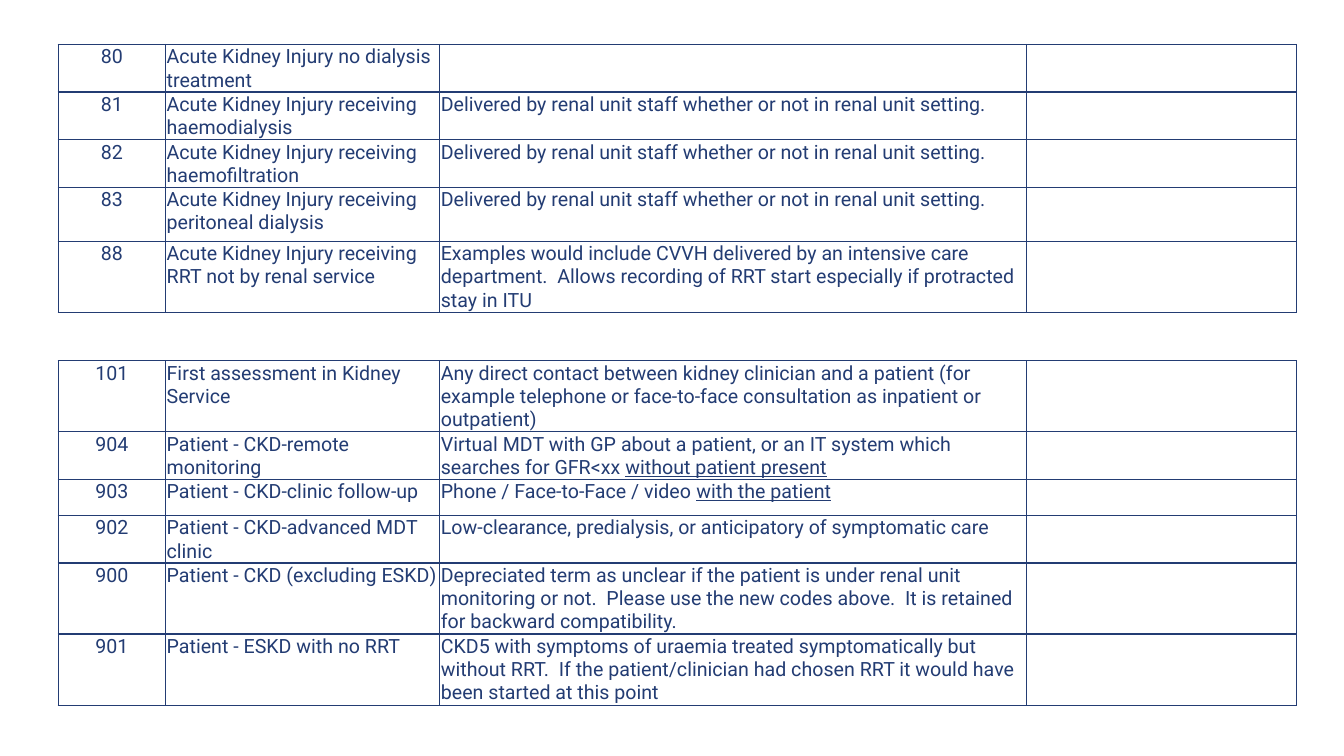
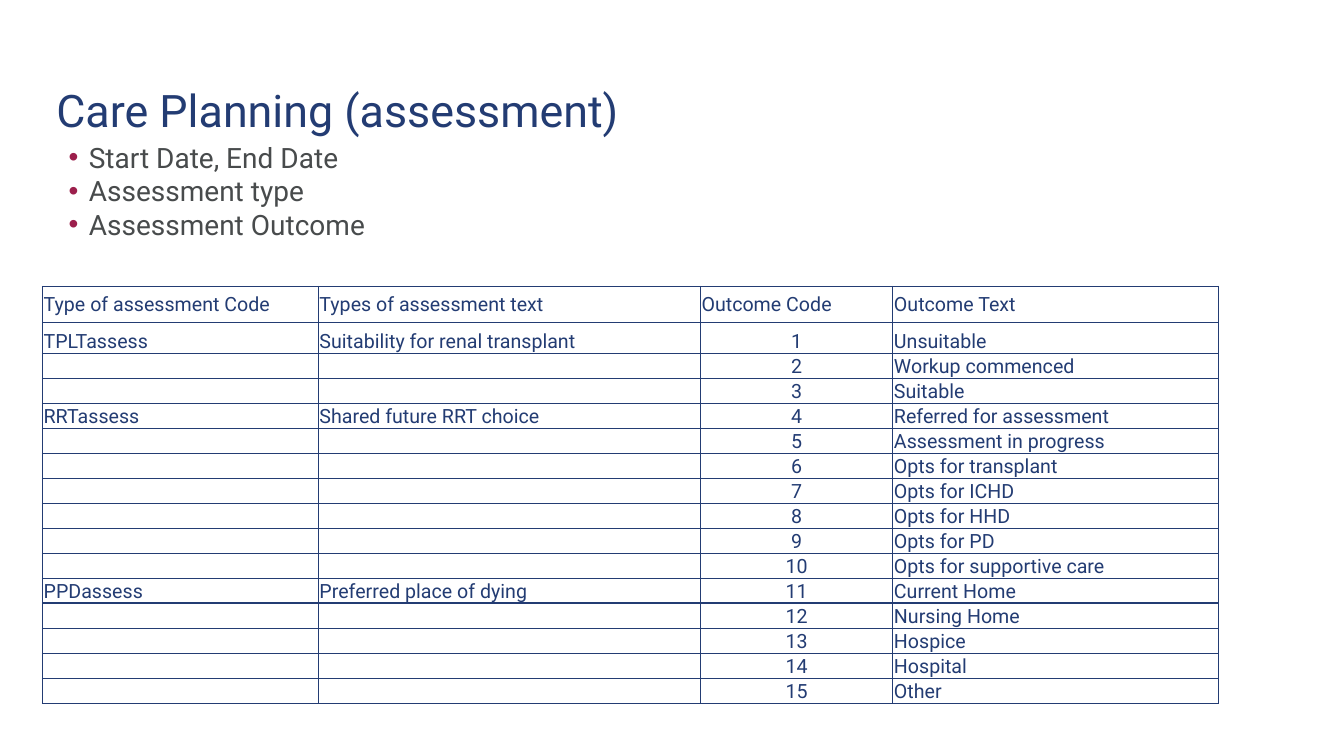
from dataclasses import dataclass
from typing import NamedTuple

from lxml.etree import SubElement
from pptx import Presentation
from pptx.dml.color import RGBColor
from pptx.enum.text import MSO_ANCHOR, MSO_AUTO_SIZE, PP_ALIGN
from pptx.oxml import parse_xml
from pptx.oxml.ns import nsdecls, qn
from pptx.util import Cm, Pt

# Shared style
FONT = "Roboto"
NAVY = "233C73"
GREY = "484B4C"
CRIMSON = "9C1F4C"
TABLE_SIZE = 14
CELL_MARGIN = Cm(0.03)


class Run(NamedTuple):
    text: str
    underline: bool = False


class Box(NamedTuple):
    left: float
    top: float
    width: float
    height: float


@dataclass(frozen=True)
class Grid:
    left: float
    top: float
    columns: list[float]
    heights: list[float]
    rows: list[list]
    centred_column: int
    anchor: MSO_ANCHOR = MSO_ANCHOR.TOP
    has_header: bool = False


def colour(value: str) -> RGBColor:
    return RGBColor.from_string(value)


def add_run(paragraph, content: Run, size: float, text_colour: str) -> None:
    run = paragraph.add_run()
    run.text = content.text
    run.font.name = FONT
    run.font.size = Pt(size)
    run.font.color.rgb = colour(text_colour)
    if content.underline:
        run.font.underline = True


# Tables
def set_borders(cell) -> None:
    properties = cell._tc.get_or_add_tcPr()
    for index, side in enumerate(("lnL", "lnR", "lnT", "lnB")):
        properties.insert(index, parse_xml(
            f'<a:{side} {nsdecls("a")} w="12700"><a:solidFill>'
            f'<a:srgbClr val="{NAVY}"/></a:solidFill></a:{side}>'))


def fill_cell(cell, content: str | tuple[Run, ...], anchor: MSO_ANCHOR,
              alignment: PP_ALIGN) -> None:
    cell.fill.background()
    cell.margin_left = cell.margin_right = cell.margin_top = CELL_MARGIN
    cell.margin_bottom = 0
    cell.vertical_anchor = anchor
    set_borders(cell)
    paragraph = cell.text_frame.paragraphs[0]
    paragraph.alignment = alignment
    runs = (Run(content),) if isinstance(content, str) else content
    for run in runs:
        if run.text:
            add_run(paragraph, run, TABLE_SIZE, NAVY)
    # Empty cells keep the table's text size, so rows stay low
    SubElement(paragraph._p, qn("a:endParaRPr"), sz=str(TABLE_SIZE * 100))


def add_grid(slide, grid: Grid) -> None:
    table = slide.shapes.add_table(
        len(grid.rows), len(grid.columns), Cm(grid.left), Cm(grid.top),
        Cm(sum(grid.columns)), Cm(sum(grid.heights))).table
    table.first_row = table.horz_banding = False
    for column, width in zip(table.columns, grid.columns):
        column.width = Cm(width)
    for row, height in zip(table.rows, grid.heights):
        row.height = Cm(height)
    for row_index, contents in enumerate(grid.rows):
        is_header = grid.has_header and row_index == 0
        anchor = MSO_ANCHOR.MIDDLE if is_header else grid.anchor
        for column_index, content in enumerate(contents):
            centred = column_index == grid.centred_column and not is_header
            fill_cell(table.cell(row_index, column_index), content, anchor,
                      PP_ALIGN.CENTER if centred else PP_ALIGN.LEFT)


# Title and list placeholders
def place(shape, box: Box, anchor: MSO_ANCHOR):
    shape.left, shape.top, shape.width, shape.height = map(Cm, box)
    frame = shape.text_frame
    frame.margin_left = frame.margin_right = 0
    frame.margin_top = frame.margin_bottom = 0
    frame.word_wrap = True
    frame.auto_size = MSO_AUTO_SIZE.NONE
    frame.vertical_anchor = anchor
    return frame


def set_title(slide, text: str) -> None:
    frame = place(slide.shapes.title, Box(1.42, 1.02, 26.49, 3.5), MSO_ANCHOR.MIDDLE)
    paragraph = frame.paragraphs[0]
    paragraph.alignment = PP_ALIGN.LEFT
    add_run(paragraph, Run(text), 32, NAVY)


def set_bullets(slide, items: list[str]) -> None:
    frame = place(slide.placeholders[1], Box(1.73, 3.53, 30.48, 5), MSO_ANCHOR.TOP)
    for index, item in enumerate(items):
        paragraph = frame.paragraphs[0] if index == 0 else frame.add_paragraph()
        paragraph.space_before = Pt(0)
        properties = paragraph._p.get_or_add_pPr()
        properties.set("marL", str(Cm(0.51)))
        properties.set("indent", str(-Cm(0.51)))
        bullet_colour = SubElement(properties, qn("a:buClr"))
        SubElement(bullet_colour, qn("a:srgbClr"), val=CRIMSON)
        SubElement(properties, qn("a:buChar"), char="•")
        add_run(paragraph, Run(item), 20, GREY)


# Content: kidney care codes
CODE_COLUMNS = [2.7, 6.91, 14.78, 6.81]
ONE_LINE, TWO_LINES, THREE_LINES = 0.91, 1.19, 1.79
BY_RENAL_STAFF = "Delivered by renal unit staff whether or not in renal unit setting."

ACUTE_ROWS = [
    ["80", "Acute Kidney Injury no dialysis treatment", "", ""],
    ["81", "Acute Kidney Injury receiving haemodialysis", BY_RENAL_STAFF, ""],
    ["82", "Acute Kidney Injury receiving haemofiltration", BY_RENAL_STAFF, ""],
    ["83", "Acute Kidney Injury receiving peritoneal dialysis", BY_RENAL_STAFF, ""],
    ["88", "Acute Kidney Injury receiving RRT not by renal service",
     "Examples would include CVVH delivered by an intensive care department.  "
     "Allows recording of RRT start especially if protracted stay in ITU", ""],
]

CHRONIC_ROWS = [
    ["101", "First assessment in Kidney Service",
     "Any direct contact between kidney clinician and a patient (for example "
     "telephone or face-to-face consultation as inpatient or outpatient)", ""],
    ["904", "Patient - CKD-remote monitoring",
     (Run("Virtual MDT with GP about a patient, or an IT system which "
          "searches for GFR<xx "), Run("without patient present", True)), ""],
    ["903", "Patient - CKD-clinic follow-up",
     (Run("Phone / Face-to-Face / video "), Run("with the patient", True)), ""],
    ["902", "Patient - CKD-advanced MDT clinic",
     "Low-clearance, predialysis, or anticipatory of symptomatic care", ""],
    ["900", "Patient - CKD (excluding ESKD)",
     "Depreciated term as unclear if the patient is under renal unit monitoring "
     "or not.  Please use the new codes above.  It is retained for backward "
     "compatibility.", ""],
    ["901", "Patient - ESKD with no RRT",
     "CKD5 with symptoms of uraemia treated symptomatically but without RRT.  "
     "If the patient/clinician had chosen RRT it would have been started at this "
     "point", ""],
]

# Content: assessments and their outcomes
ASSESSMENT_HEADER = ["Type of assessment Code", "Types of assessment text",
                     "Outcome Code", "Outcome Text"]
ASSESSMENTS = [
    ("TPLTassess", "Suitability for renal transplant",
     ["Unsuitable", "Workup commenced", "Suitable"]),
    ("RRTassess", "Shared future RRT choice",
     ["Referred for assessment", "Assessment in progress", "Opts for transplant",
      "Opts for ICHD", "Opts for HHD", "Opts for PD", "Opts for supportive care"]),
    ("PPDassess", "Preferred place of dying",
     ["Current Home", "Nursing Home", "Hospice", "Hospital", "Other"]),
]


def assessment_rows() -> list[list[str]]:
    rows = [ASSESSMENT_HEADER]
    for code, description, outcomes in ASSESSMENTS:
        for index, outcome in enumerate(outcomes):
            labels = [code, description] if index == 0 else ["", ""]
            rows.append([*labels, str(len(rows)), outcome])
    return rows


# Slides
def build_codes_slide(presentation) -> None:
    slide = presentation.slides.add_slide(presentation.slide_layouts[6])
    add_grid(slide, Grid(
        1.47, 1.12, CODE_COLUMNS,
        [TWO_LINES, TWO_LINES, TWO_LINES, 1.36, THREE_LINES],
        ACUTE_ROWS, centred_column=0))
    add_grid(slide, Grid(
        1.47, 9.09, CODE_COLUMNS,
        [THREE_LINES, TWO_LINES, ONE_LINE, TWO_LINES, THREE_LINES, THREE_LINES],
        CHRONIC_ROWS, centred_column=0))


def build_planning_slide(presentation) -> None:
    slide = presentation.slides.add_slide(presentation.slide_layouts[1])
    set_title(slide, "Care Planning (assessment)")
    set_bullets(slide, ["Start Date, End Date", "Assessment type", "Assessment Outcome"])
    rows = assessment_rows()
    add_grid(slide, Grid(
        1.07, 7.22, [6.95, 9.63, 4.85, 8.21],
        [ONE_LINE, 0.78] + [0.61] * (len(rows) - 2),
        rows, centred_column=2, anchor=MSO_ANCHOR.BOTTOM, has_header=True))


def main() -> None:
    presentation = Presentation()
    presentation.slide_width = Cm(33.87)
    presentation.slide_height = Cm(19.05)
    build_codes_slide(presentation)
    build_planning_slide(presentation)
    presentation.save("out.pptx")


if __name__ == "__main__":
    main()
